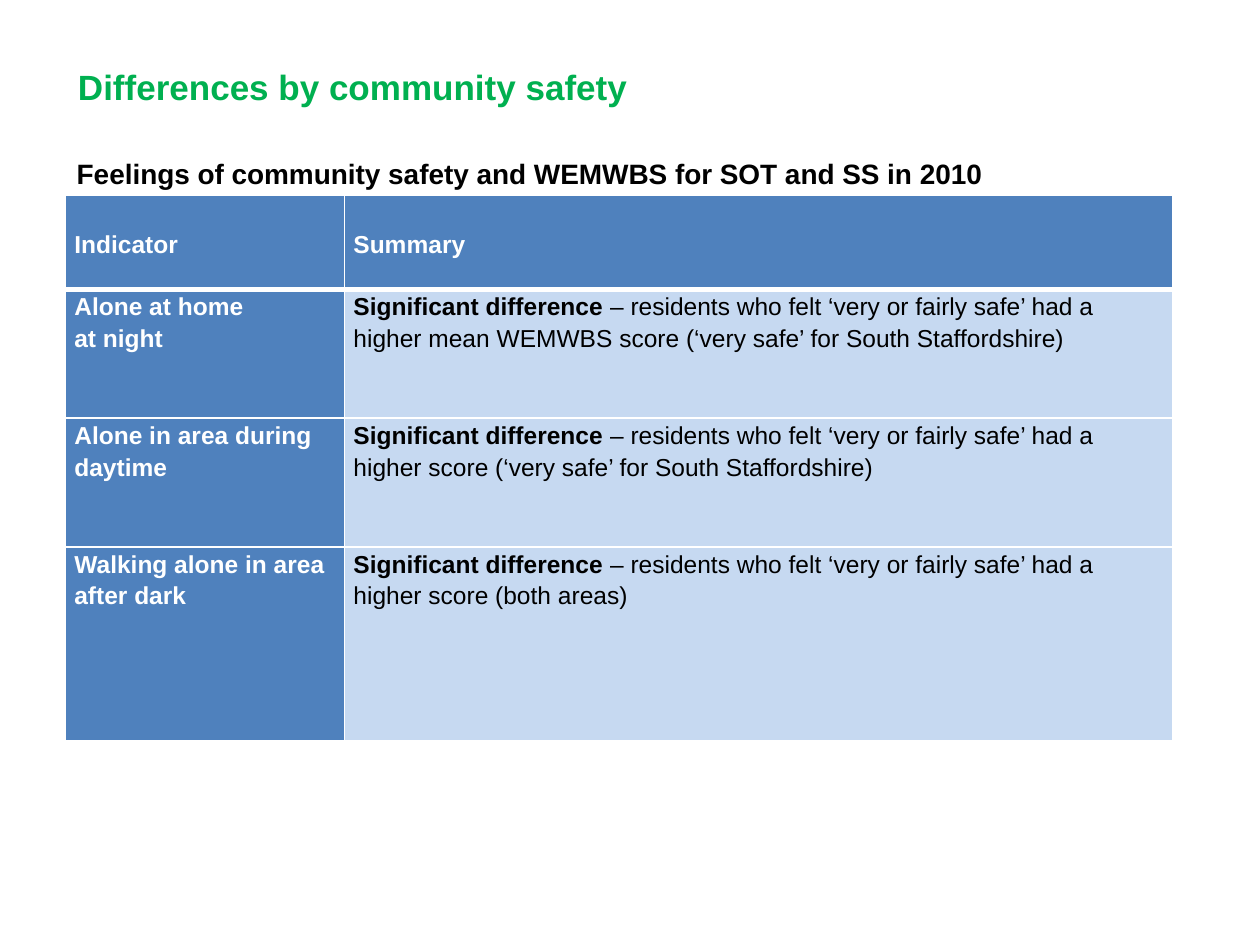
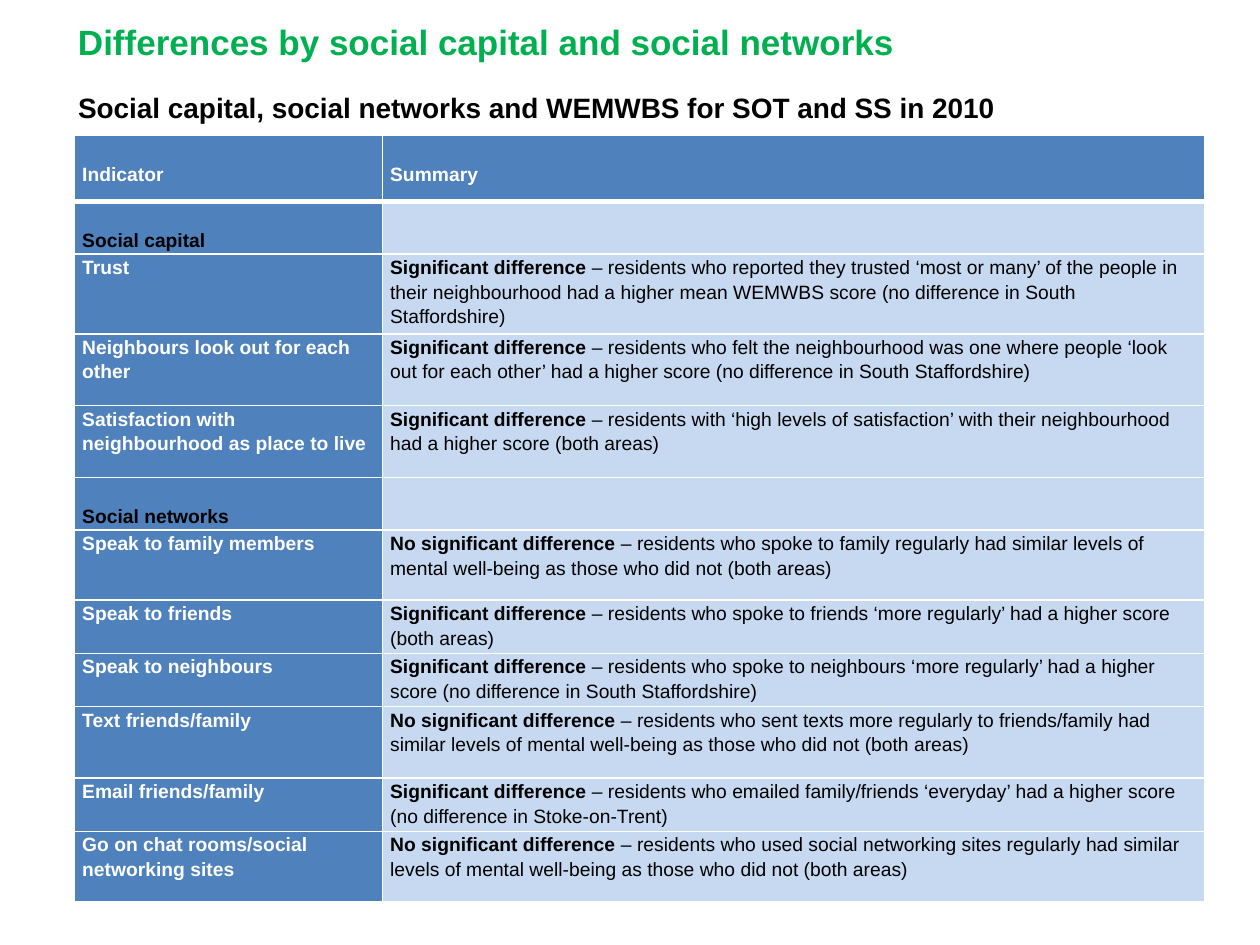
from lxml.etree import SubElement
from pptx import Presentation
from pptx.dml.color import RGBColor
from pptx.enum.text import MSO_ANCHOR
from pptx.oxml.ns import qn
from pptx.util import Pt

FONT = "Arial"
GREEN, BLACK, WHITE = "00B050", "000000", "FFFFFF"
BLUE, PALE_BLUE = "4F81BD", "C6D9F1"
LINE_SPACING = 1.15
YES, NO = "Significant difference ", "No significant difference "

SAFETY_ROWS = [
    (73.5, "Alone at home\nat night", YES,
     "– residents who felt ‘very or fairly safe’ had a higher mean WEMWBS score "
     "(‘very safe’ for South Staffordshire)"),
    (73.5, "Alone in area during\ndaytime", YES,
     "– residents who felt ‘very or fairly safe’ had a higher score "
     "(‘very safe’ for South Staffordshire)"),
    (111, "Walking alone in area\nafter dark", YES,
     "– residents who felt ‘very or fairly safe’ had a higher score (both areas)"),
]

SOCIAL_ROWS = [
    (30.25, "Social capital", None, None),
    (45.5, "Trust", YES,
     "– residents who reported they trusted ‘most or many’ of the people in their "
     "neighbourhood had a higher mean WEMWBS score (no difference in South Staffordshire)"),
    (41, "Neighbours look out for each other", YES,
     "– residents who felt the neighbourhood was one where people ‘look out for "
     "each other’ had a higher score (no difference in South Staffordshire)"),
    (41, "Satisfaction with neighbourhood as place to live", YES,
     "– residents with ‘high levels of satisfaction’ with their neighbourhood "
     "had a higher score (both areas)"),
    (30.25, "Social networks", None, None),
    (40, "Speak to family members", NO,
     "– residents who spoke to family regularly had similar levels of mental "
     "well-being as those who did not (both areas)"),
    (30.25, "Speak to friends", YES,
     "– residents who spoke to friends ‘more regularly’ had a higher score (both areas)"),
    (30.25, "Speak to neighbours", YES,
     "– residents who spoke to neighbours ‘more regularly’ had a higher score "
     "(no difference in South Staffordshire)"),
    (41, "Text friends/family", NO,
     "– residents who sent texts more regularly to friends/family had similar levels "
     "of mental well-being as those who did not (both areas)"),
    (30.25, "Email friends/family", YES,
     "– residents who emailed family/friends ‘everyday’ had a higher score "
     "(no difference in Stoke-on-Trent)"),
    (40, "Go on chat rooms/social networking sites", NO,
     "– residents who used social networking sites regularly had similar levels of "
     "mental well-being as those who did not (both areas)"),
]


def rgb(value):
    return RGBColor.from_string(value)


def add_run(p, text, size, color, bold=True):
    r = p.add_run()
    r.text = text
    r.font.name = FONT
    r.font.size = Pt(size)
    r.font.bold = bold
    r.font.color.rgb = rgb(color)


def add_heading(s, box, text, size, color):
    tf = s.shapes.add_textbox(*map(Pt, box)).text_frame
    tf.word_wrap = True
    p = tf.paragraphs[0]
    p.line_spacing = 0.9
    add_run(p, text, size, color)


def set_borders(cell, widths):
    tc_pr = cell._tc.get_or_add_tcPr()
    for side, width in zip("LRTB", widths):
        ln = SubElement(tc_pr, qn(f"a:ln{side}"), w=str(Pt(width)))
        fill = SubElement(ln, qn("a:solidFill"))
        SubElement(fill, qn("a:srgbClr"), val=WHITE)


def fill_cell(cell, lines, size, fill, inset, top=0, borders=(1, 1, 1, 1)):
    set_borders(cell, borders)
    cell.fill.solid()
    cell.fill.fore_color.rgb = rgb(fill)
    cell.margin_left = cell.margin_right = Pt(inset)
    cell.margin_top, cell.margin_bottom = Pt(top), 0
    cell.vertical_anchor = MSO_ANCHOR.TOP
    tf = cell.text_frame
    for i, runs in enumerate(lines):
        p = tf.add_paragraph() if i else tf.paragraphs[0]
        p.line_spacing = LINE_SPACING
        for text, color, bold in runs:
            add_run(p, text, size, color, bold)


def add_summary_table(s, left, top, widths, header_height, rows, size, inset):
    heights = [header_height] + [row[0] for row in rows]
    table = s.shapes.add_table(len(heights), 2, Pt(left), Pt(top),
                               Pt(sum(widths)), Pt(sum(heights))).table
    table.first_row = table.horz_banding = False
    for column, width in zip(table.columns, widths):
        column.width = Pt(width)
    for row, height in zip(table.rows, heights):
        row.height = Pt(height)

    line_drop = round(size * 1.15 * LINE_SPACING, 2)
    for col, label in enumerate(("Indicator", "Summary")):
        fill_cell(table.cell(0, col), [[(label, WHITE, True)]], size, BLUE,
                  inset, line_drop, (1, 1, 1, 3))
    for i, (_, indicator, finding, detail) in enumerate(rows, 1):
        top_borders = (1, 1, 3 if i == 1 else 1, 1)
        is_section = finding is None
        color = BLACK if is_section else WHITE
        names = [[(name, color, True)] for name in indicator.split("\n")]
        summary = [] if is_section else [[(finding, BLACK, True), (detail, BLACK, False)]]
        fill_cell(table.cell(i, 0), names, size, BLUE, inset,
                  line_drop if is_section else 0, top_borders)
        fill_cell(table.cell(i, 1), summary, size, PALE_BLUE, inset, 0, top_borders)


def add_differences_slide(prs, title, title_top, subtitle, subtitle_box, **table):
    s = prs.slides.add_slide(prs.slide_layouts[6])
    add_heading(s, (37.5, title_top, 640, 29), title, 20, GREEN)
    add_heading(s, subtitle_box, subtitle, 16, BLACK)
    add_summary_table(s, **table)


def main():
    prs = Presentation()
    prs.slide_width, prs.slide_height = Pt(720), Pt(540)
    add_differences_slide(
        prs, "Differences by community safety", 36.75,
        "Feelings of community safety and WEMWBS for SOT and SS in 2010",
        (36.75, 88, 635, 24),
        left=37.5, top=111.5, widths=(159.5, 473), header_height=54,
        rows=SAFETY_ROWS, size=14, inset=5)
    add_differences_slide(
        prs, "Differences by social capital and social networks", 10.75,
        "Social capital, social networks and WEMWBS for SOT and SS in 2010",
        (37.5, 50.5, 635, 24),
        left=42.5, top=77.5, widths=(176, 470), header_height=37.5,
        rows=SOCIAL_ROWS, size=11, inset=4.5)
    prs.save("out.pptx")


if __name__ == "__main__":
    main()
